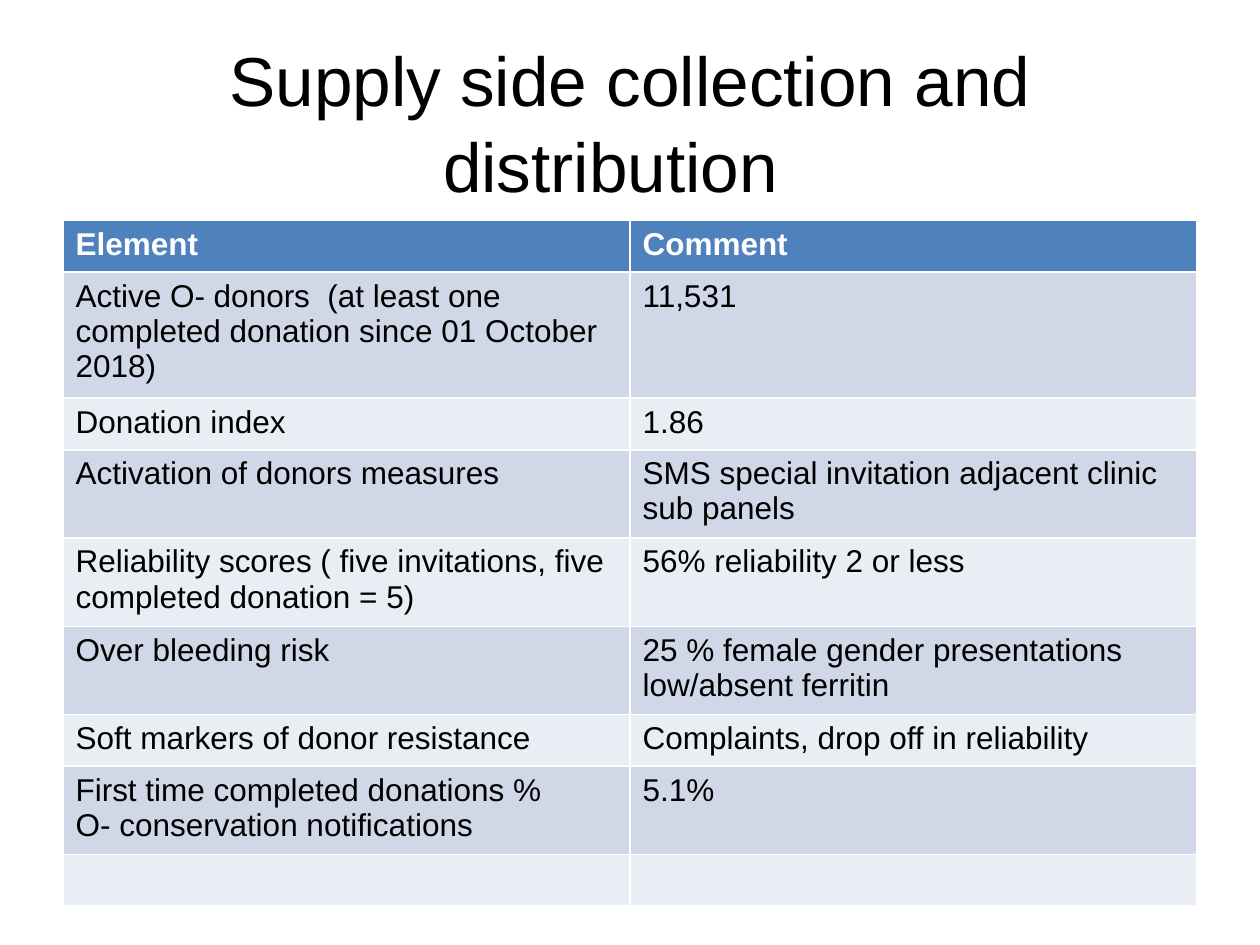
"""Build a slide with a title and a two-column table on donor supply."""
from pptx import Presentation
from pptx.dml.color import RGBColor
from pptx.enum.text import MSO_ANCHOR, PP_ALIGN
from pptx.util import Inches, Pt

CENTER = PP_ALIGN.CENTER
MIDDLE = MSO_ANCHOR.MIDDLE
FONT = "Arial"
COLORS = {
    "header": "4F81BD",
    "odd": "D0D8E8",
    "even": "E9EDF4",
    "white": "FFFFFF",
    "black": "000000",
}
ROWS = [
    ("Element", "Comment"),
    ("Active O- donors  (at least one completed donation since 01 October 2018)", "11,531"),
    ("Donation index", "1.86"),
    ("Activation of donors measures", "SMS special invitation adjacent clinic sub panels"),
    ("Reliability scores ( five invitations, five completed donation = 5)",
     "56% reliability 2 or less"),
    ("Over bleeding risk", "25 % female gender presentations low/absent ferritin"),
    ("Soft markers of donor resistance", "Complaints, drop off in reliability"),
    ("First time completed donations %\nO- conservation notifications", "5.1%"),
    ("", ""),
]
ROW_HEIGHT = 0.41


def style_text(paragraph, size, color, bold=False):
    paragraph.font.name = FONT
    paragraph.font.size = Pt(size)
    paragraph.font.bold = bold
    paragraph.font.color.rgb = RGBColor.from_string(COLORS[color])


deck = Presentation()
deck.slide_width = Inches(10)
deck.slide_height = Inches(7.5)
page = deck.slides.add_slide(deck.slide_layouts[6])

title = page.shapes.add_textbox(Inches(0.5), Inches(0.33), Inches(9), Inches(1.25))
title.text_frame.word_wrap = True
title.text_frame.vertical_anchor = MIDDLE
heading = title.text_frame.paragraphs[0]
heading.text = "Supply side collection and distribution  "
heading.alignment = CENTER
heading.line_spacing = 1.04
style_text(heading, 39.6, "black")

table = page.shapes.add_table(
    len(ROWS), 2, Inches(0.5), Inches(1.75), Inches(9), Inches(ROW_HEIGHT * len(ROWS))
).table
for row_number, texts in enumerate(ROWS):
    is_header = row_number == 0
    fill = "header" if is_header else "odd" if row_number % 2 else "even"
    table.rows[row_number].height = Inches(ROW_HEIGHT)
    for column_number, text in enumerate(texts):
        cell = table.cell(row_number, column_number)
        cell.text = text
        cell.fill.solid()
        cell.fill.fore_color.rgb = RGBColor.from_string(COLORS[fill])
        for paragraph in cell.text_frame.paragraphs:
            style_text(paragraph, 18, "white" if is_header else "black", is_header)

deck.save("out.pptx")
